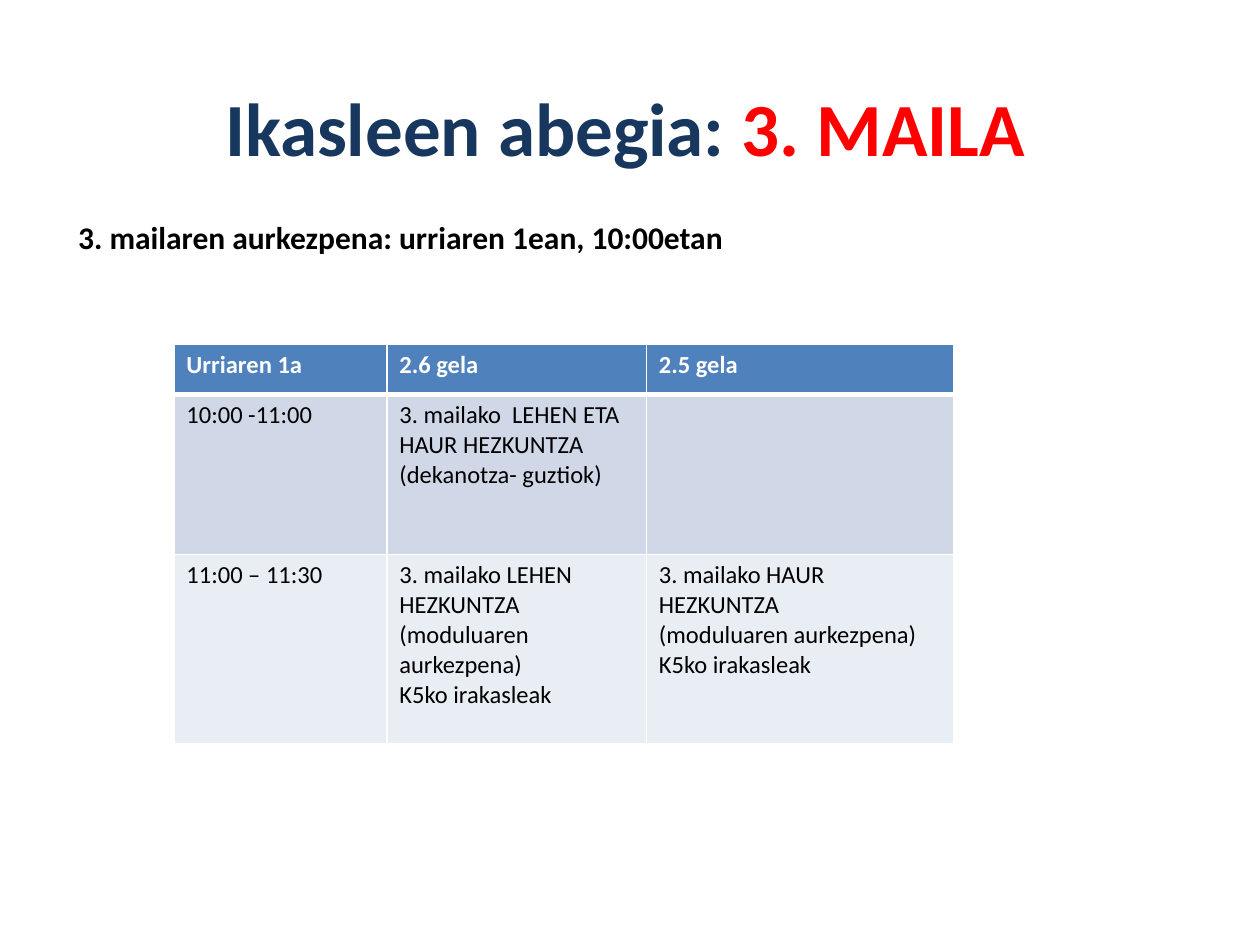
import pptx
import pptx.util
import pptx.dml.color
import pptx.enum.text
from lxml import etree
from pptx.oxml.ns import qn

WHITE, BLACK, NAVY, RED = "FFFFFF", "000000", "17375E", "FF0000"


def color(hex_value):
    return pptx.dml.color.RGBColor.from_string(hex_value)


def add_text(paragraph, text, size, ink, bold):
    run = paragraph.add_run()
    run.text = text
    run.font.color.rgb = color(ink)
    font_format = {"name": "Calibri", "size": pptx.util.Pt(size), "bold": bold}
    for attribute, value in font_format.items():
        setattr(run.font, attribute, value)


deck = pptx.Presentation()
deck.slide_width = pptx.util.Inches(10)
deck.slide_height = pptx.util.Inches(7.5)
slide = deck.slides.add_slide(deck.slide_layouts[1])
heading, announcement = slide.placeholders

# Heading and announcement: left, top, width, height in inches
middle = pptx.enum.text.MSO_ANCHOR.MIDDLE
top = pptx.enum.text.MSO_ANCHOR.TOP
for placeholder, box, anchor in (
    (heading, (0.43, 0.29, 9.06, 1.42), middle),
    (announcement, (0.52, 1.68, 8.98, 0.4), top),
):
    for attribute, value in zip(("left", "top", "width", "height"), box):
        setattr(placeholder, attribute, pptx.util.Inches(value))
    frame_format = {
        "word_wrap": True,
        "vertical_anchor": anchor,
        "auto_size": pptx.enum.text.MSO_AUTO_SIZE.NONE,
    }
    for attribute, value in frame_format.items():
        setattr(placeholder.text_frame, attribute, value)

heading_line = heading.text_frame.paragraphs[0]
heading_line.alignment = pptx.enum.text.PP_ALIGN.CENTER
add_text(heading_line, "Ikasleen abegia: ", 42.9, NAVY, True)
add_text(heading_line, "3. MAILA", 42.9, RED, True)

announcement_line = announcement.text_frame.paragraphs[0]
announcement_line.space_before = pptx.util.Pt(0)
add_text(announcement_line, "3. mailaren aurkezpena: urriaren 1ean, 10:00etan",
         18, BLACK, True)
properties = announcement_line._p.get_or_add_pPr()
for attribute in ("marL", "indent"):
    properties.set(attribute, "0")
etree.SubElement(properties, qn("a:buNone"))

# Timetable: each cell is a list of paragraphs
timetable = [
    [["Urriaren 1a"], ["2.6 gela"], ["2.5 gela"]],
    [["10:00 -11:00"],
     ["3. mailako  LEHEN ETA HAUR HEZKUNTZA", "(dekanotza- guztiok)"],
     []],
    [["11:00 – 11:30"],
     ["3. mailako LEHEN HEZKUNTZA (moduluaren aurkezpena)", "K5ko irakasleak"],
     ["3. mailako HAUR HEZKUNTZA", "(moduluaren aurkezpena) K5ko irakasleak"]],
]
column_widths = [1.69, 2.06, 2.44]
row_heights = [0.4, 1.27, 1.5]
row_fills = ["4F81BD", "D0D8E8", "E9EDF4"]

schedule = slide.shapes.add_table(
    len(row_heights), len(column_widths),
    pptx.util.Inches(1.38), pptx.util.Inches(2.73),
    pptx.util.Inches(sum(column_widths)), pptx.util.Inches(sum(row_heights)),
).table
for column, width in zip(schedule.columns, column_widths):
    column.width = pptx.util.Inches(width)

for r, (entries, height, fill) in enumerate(zip(timetable, row_heights, row_fills)):
    schedule.rows[r].height = pptx.util.Inches(height)
    is_header = r == 0
    border_points = {"lnL": 1, "lnR": 1,
                     "lnT": 3 if r == 1 else 1, "lnB": 3 if is_header else 1}
    for c, lines in enumerate(entries):
        cell = schedule.cell(r, c)
        for side, points in border_points.items():
            border = etree.SubElement(cell._tc.get_or_add_tcPr(), qn("a:" + side),
                                      w=str(pptx.util.Pt(points)))
            solid = etree.SubElement(border, qn("a:solidFill"))
            etree.SubElement(solid, qn("a:srgbClr"), val=WHITE)
        cell.fill.solid()
        cell.fill.fore_color.rgb = color(fill)
        for i, line in enumerate(lines):
            frame = cell.text_frame
            paragraph = frame.add_paragraph() if i else frame.paragraphs[0]
            add_text(paragraph, line, 14, WHITE if is_header else BLACK, is_header)

deck.save("out.pptx")
